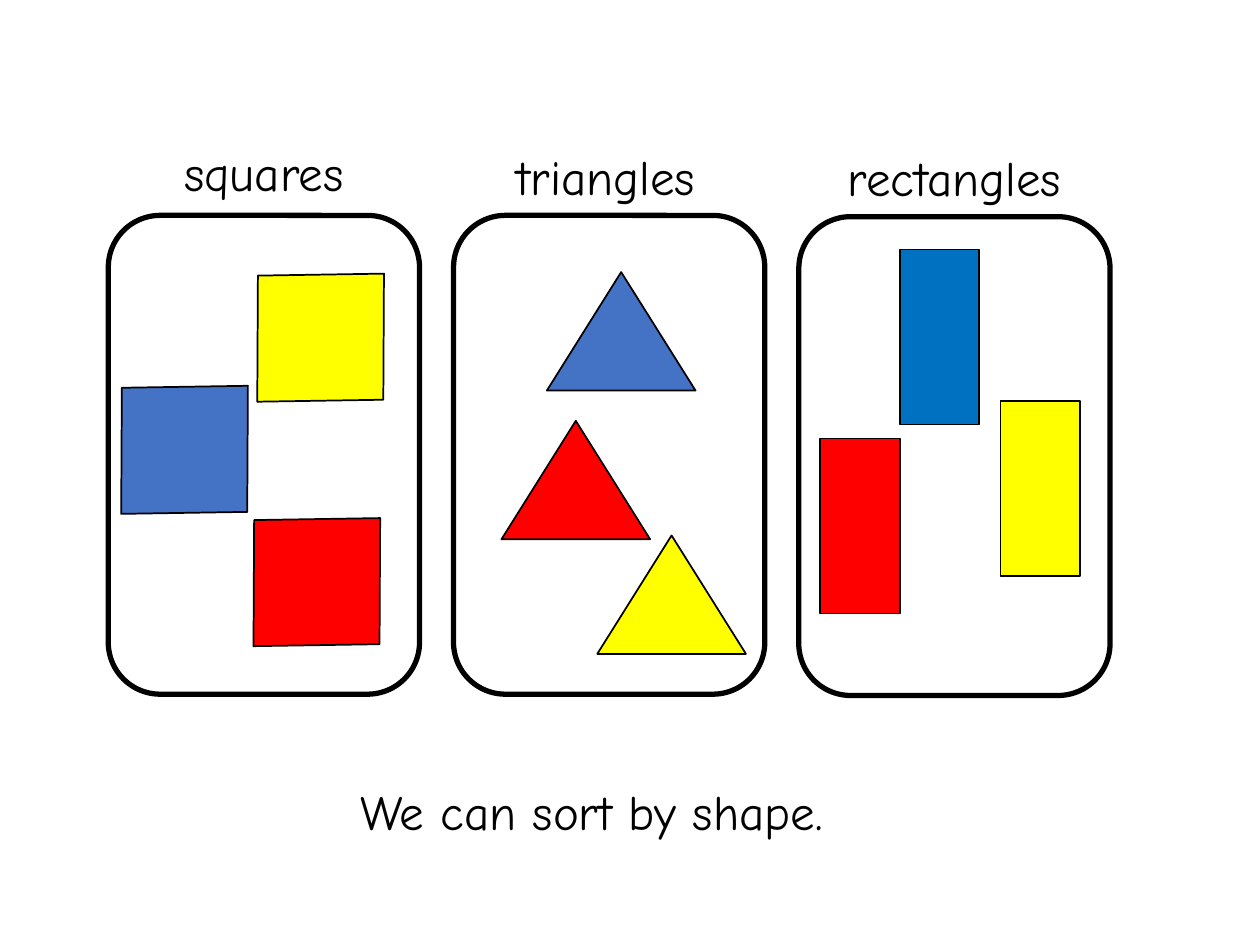
import dataclasses

import pptx
import pptx.dml.color
import pptx.enum.shapes
import pptx.enum.text
import pptx.util

SHAPES = pptx.enum.shapes.MSO_SHAPE
EMU_PER_PX = 9144  # 100 px to the inch


@dataclasses.dataclass(frozen=True)
class Theme:
    font: str = "Comic Neue"
    text_size: int = 28
    ink: str = "000000"
    blue: str = "4472C4"
    deep_blue: str = "0070C0"
    red: str = "FF0000"
    yellow: str = "FFFF00"
    figure_line: int = 1
    panel_line: int = 3


THEME = Theme()

# Kind of figure: preset, width, height, rotation
SQUARE = (SHAPES.DIAMOND, 143, 140, 314.7)
TRIANGLE = (SHAPES.ISOSCELES_TRIANGLE, 118, 94, 0)
RECTANGLE = (SHAPES.RECTANGLE, 139, 63, 90)

PANEL_LEFT, PANEL_STEP = 86, 274
PANEL_WIDTH, PANEL_HEIGHT = 247, 380
LABEL_HEIGHT = 57

# Label, label top, label width, panel top, figure kind, figures (left, top, colour)
GROUPS = [
    ("squares", 108, 247, 171, SQUARE,
     [(75, 287, THEME.blue), (180, 392, THEME.red), (183, 198, THEME.yellow)]),
    ("triangles", 111, 242, 171, TRIANGLE,
     [(434, 216, THEME.blue), (474, 425, THEME.yellow), (398, 334, THEME.red)]),
    ("rectangles", 112, 247, 172, RECTANGLE,
     [(613, 386, THEME.red), (676, 236, THEME.deep_blue), (756, 356, THEME.yellow)]),
]


def px(length):
    return pptx.util.Emu(length * EMU_PER_PX)


def rgb(colour):
    return pptx.dml.color.RGBColor.from_string(colour)


def add_outlined_shape(slide, preset, box, line_width, fill=None):
    """Add a preset shape with an ink outline; no fill leaves it hollow."""
    shape = slide.shapes.add_shape(preset, *map(px, box))
    shape.shadow.inherit = False
    shape.line.color.rgb = rgb(THEME.ink)
    shape.line.width = pptx.util.Pt(line_width)
    if fill is None:
        shape.fill.background()
    else:
        shape.fill.solid()
        shape.fill.fore_color.rgb = rgb(fill)
    return shape


def add_figure(slide, kind, left, top, colour):
    preset, width, height, rotation = kind
    figure = add_outlined_shape(slide, preset, (left, top, width, height),
                                THEME.figure_line, colour)
    figure.rotation = rotation


def add_centred_text(slide, text, left, top, width):
    box = slide.shapes.add_textbox(px(left), px(top), px(width), px(LABEL_HEIGHT))
    frame = box.text_frame
    frame.text = text
    frame.word_wrap = True
    frame.auto_size = pptx.enum.text.MSO_AUTO_SIZE.SHAPE_TO_FIT_TEXT
    paragraph = frame.paragraphs[0]
    paragraph.alignment = pptx.enum.text.PP_ALIGN.CENTER
    font = paragraph.runs[0].font
    font.name = THEME.font
    font.size = pptx.util.Pt(THEME.text_size)
    font.color.rgb = rgb(THEME.ink)


def add_group(slide, left, group):
    """Add a labelled panel and the figures sorted into it."""
    label, label_top, label_width, panel_top, kind, figures = group
    for figure in figures:
        add_figure(slide, kind, *figure)
    add_outlined_shape(slide, SHAPES.ROUNDED_RECTANGLE,
                       (left, panel_top, PANEL_WIDTH, PANEL_HEIGHT), THEME.panel_line)
    add_centred_text(slide, label, left, label_top, label_width)


def main():
    presentation = pptx.Presentation()
    presentation.slide_width, presentation.slide_height = px(1000), px(750)
    slide = presentation.slides.add_slide(presentation.slide_layouts[6])
    add_centred_text(slide, "We can sort by shape.", 92, 615, 755)
    for column, group in enumerate(GROUPS):
        add_group(slide, PANEL_LEFT + column * PANEL_STEP, group)
    presentation.save("out.pptx")


if __name__ == "__main__":
    main()
